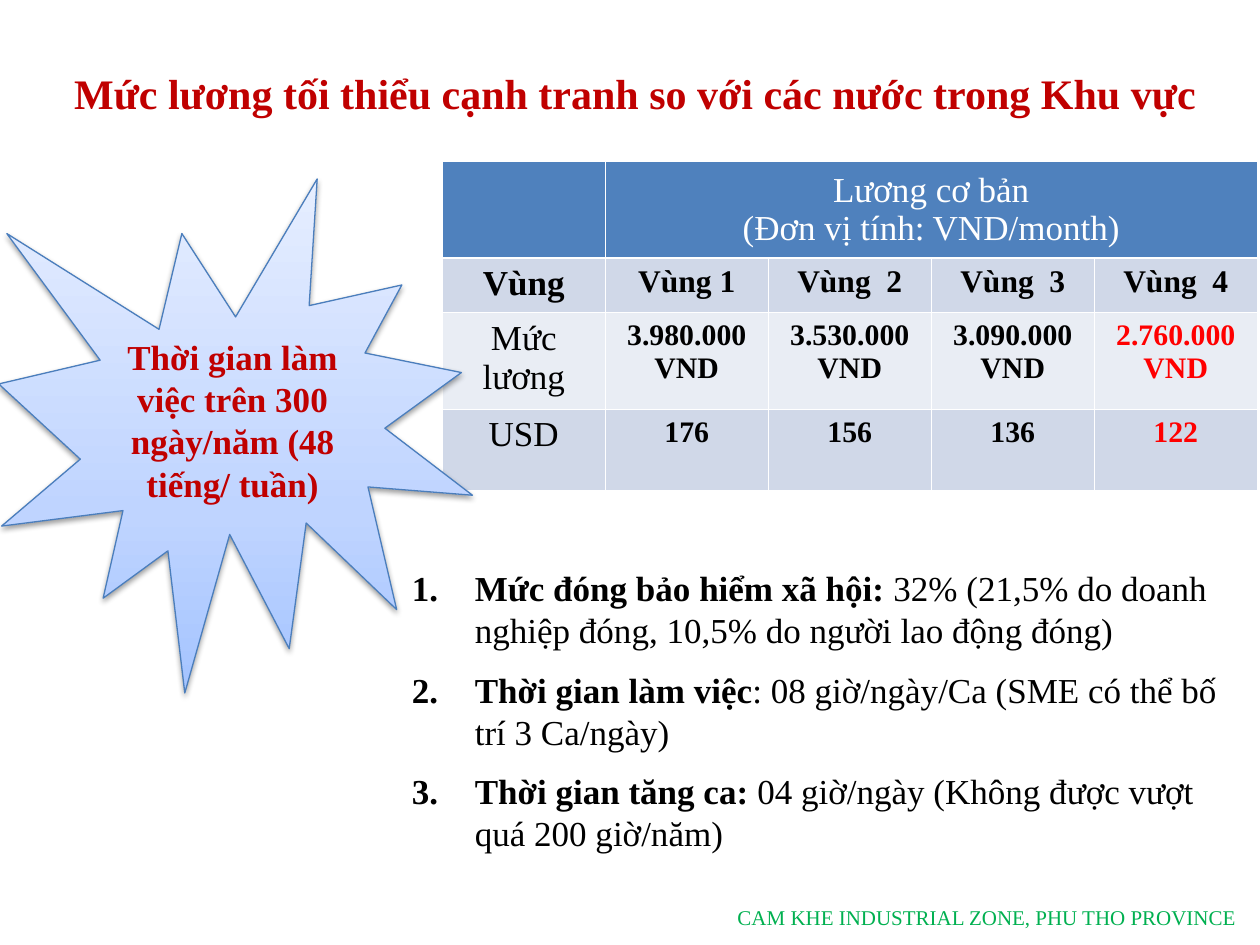
import pptx
import pptx.dml.color
import pptx.enum.shapes
import pptx.enum.text
import pptx.oxml
import pptx.oxml.ns
import pptx.util

COLORS = {
    "red": "C00000", "highlight": "FF0000", "green": "00B050",
    "black": "000000", "white": "FFFFFF", "header": "4F81BD",
    "band": "D0D8E8", "light band": "E9EDF4", "outline": "4B7EBC",
    "star bottom": "A4C4FF", "star middle": "BFD4FF", "star top": "E6EEFF",
}
ALIGN = pptx.enum.text.PP_ALIGN
ANCHOR = pptx.enum.text.MSO_ANCHOR
NAMESPACE = pptx.oxml.ns.nsdecls("a")


class SlideBuilder:
    """Places elements on a grid of 100 columns by 75 rows."""

    font = "Times New Roman"
    columns, rows = 100, 75

    def __init__(self, presentation):
        self.slide = presentation.slides.add_slide(presentation.slide_layouts[6])
        self.column = presentation.slide_width / self.columns
        self.row = presentation.slide_height / self.rows

    def box(self, left, top, width, height):
        return (round(left * self.column), round(top * self.row),
                round(width * self.column), round(height * self.row))

    def color(self, name):
        return pptx.dml.color.RGBColor.from_string(COLORS[name])

    def run(self, paragraph, text, size, color="black", bold=False):
        run = paragraph.add_run()
        run.text = text
        run.font.name = self.font
        run.font.size = pptx.util.Pt(size)
        run.font.bold = bold
        run.font.color.rgb = self.color(color)

    def fill_text(self, frame, lines, size, color, bold, align=ALIGN.CENTER):
        for index, line in enumerate(lines):
            paragraph = frame.add_paragraph() if index else frame.paragraphs[0]
            paragraph.alignment = align
            self.run(paragraph, line, size, color, bold)

    def text_frame(self, place, anchor):
        frame = self.slide.shapes.add_textbox(*self.box(*place)).text_frame
        frame.word_wrap = True
        frame.vertical_anchor = anchor
        return frame

    def text(self, place, text, size, color, bold=False, align=ALIGN.CENTER):
        frame = self.text_frame(place, ANCHOR.MIDDLE)
        self.fill_text(frame, [text], size, color, bold, align)

    def numbered_list(self, place, items, size):
        frame = self.text_frame(place, ANCHOR.TOP)
        for index, (heading, detail) in enumerate(items):
            paragraph = frame.add_paragraph() if index else frame.paragraphs[0]
            paragraph.space_before = pptx.util.Pt(size / 2)
            properties = paragraph._p.get_or_add_pPr()
            indent = pptx.util.Inches(0.5)
            properties.set("marL", str(indent))
            properties.set("indent", str(-indent))
            properties.append(pptx.oxml.parse_xml(
                f'<a:buAutoNum {NAMESPACE} type="arabicPeriod"/>'))
            self.run(paragraph, heading, size, bold=True)
            self.run(paragraph, detail, size)

    def table(self, place, heights, fills):
        frame = self.slide.shapes.add_table(len(heights), 5, *self.box(*place))
        table = frame.table
        for row, height, fill in zip(table.rows, heights, fills):
            row.height = round(height * self.row)
            for cell in row.cells:
                cell.fill.solid()
                cell.fill.fore_color.rgb = self.color(fill)
        return table

    def star(self, place, text, size, color, stops):
        shape = self.slide.shapes.add_shape(
            pptx.enum.shapes.MSO_SHAPE.EXPLOSION1, *self.box(*place))
        shape.line.color.rgb = self.color("outline")
        shape.line.width = pptx.util.Pt(0.75)
        # Gradient running upwards, then a soft shadow below
        stop_xml = "".join(
            f'<a:gs pos="{share * 1000}"><a:srgbClr val="{COLORS[name]}"/></a:gs>'
            for share, name in stops)
        properties = shape._element.spPr
        properties.find(pptx.oxml.ns.qn("a:prstGeom")).addnext(pptx.oxml.parse_xml(
            f'<a:gradFill {NAMESPACE} rotWithShape="1"><a:gsLst>{stop_xml}</a:gsLst>'
            '<a:lin ang="16200000" scaled="0"/></a:gradFill>'))
        properties.append(pptx.oxml.parse_xml(
            f'<a:effectLst {NAMESPACE}><a:outerShdw blurRad="{pptx.util.Pt(3.1)}" '
            f'dist="{pptx.util.Pt(1.6)}" dir="5400000" rotWithShape="0">'
            f'<a:srgbClr val="{COLORS["black"]}"><a:alpha val="38000"/></a:srgbClr>'
            '</a:outerShdw></a:effectLst>'))
        frame = shape.text_frame
        frame.word_wrap = True
        frame.vertical_anchor = ANCHOR.MIDDLE
        self.fill_text(frame, [text], size, color, True)


def main():
    presentation = pptx.Presentation()
    presentation.slide_width = pptx.util.Inches(10)
    presentation.slide_height = pptx.util.Inches(7.5)
    builder = SlideBuilder(presentation)

    # Title
    builder.text((0.8, 3, 99.2, 8.7),
                 "Mức lương tối thiểu cạnh tranh so với các nước trong Khu vực",
                 24, "red", bold=True)

    # Conditions of work
    builder.numbered_list((31.7, 44.5, 67.5, 24.6), [
        ("Mức đóng bảo hiểm xã hội: ",
         "32% (21,5% do doanh nghiệp đóng, 10,5% do người lao động đóng)"),
        ("Thời gian làm việc", ": 08 giờ/ngày/Ca (SME có thể bố trí 3 Ca/ngày)"),
        ("Thời gian tăng ca: ", "04 giờ/ngày (Không được vượt quá 200 giờ/năm)"),
    ], 20)

    # Wage table: label, its boldness, value size, values by region
    table = builder.table((35.1, 12.8, 64.7, 25.9), [7.6, 4.3, 7, 6.5],
                          ["header", "band", "light band", "band"])
    heading = table.cell(0, 1)
    heading.merge(table.cell(0, 4))
    heading.vertical_anchor = ANCHOR.MIDDLE
    builder.fill_text(heading.text_frame, ["Lương cơ bản", "(Đơn vị tính: VND/month)"],
                      20, "white", False)
    wages = [
        ("Vùng", True, 18, ["Vùng 1", "Vùng  2", "Vùng  3", "Vùng  4"]),
        ("Mức lương", False, 17, ["3.980.000 VND", "3.530.000 VND",
                                  "3.090.000 VND", "2.760.000 VND"]),
        ("USD", False, 17, ["176", "156", "136", "122"]),
    ]
    for row, (label, bold, size, values) in enumerate(wages, 1):
        builder.fill_text(table.cell(row, 0).text_frame, [label], 20, "black", bold)
        for column, value in enumerate(values, 1):
            color = "highlight" if row > 1 and column == 4 else "black"
            builder.fill_text(table.cell(row, column).text_frame, [value],
                              size, color, True)

    # Working time star
    builder.star((-0.1, 14.2, 37.6, 40.8),
                 "Thời gian làm việc trên 300 ngày/năm (48 tiếng/ tuần)", 20, "red",
                 [(0, "star bottom"), (35, "star middle"), (100, "star top")])

    # Footer
    builder.text((35.8, 70.8, 63.3, 4), "CAM KHE INDUSTRIAL ZONE, PHU THO PROVINCE",
                 12, "green", align=ALIGN.RIGHT)

    presentation.save("out.pptx")


if __name__ == "__main__":
    main()
